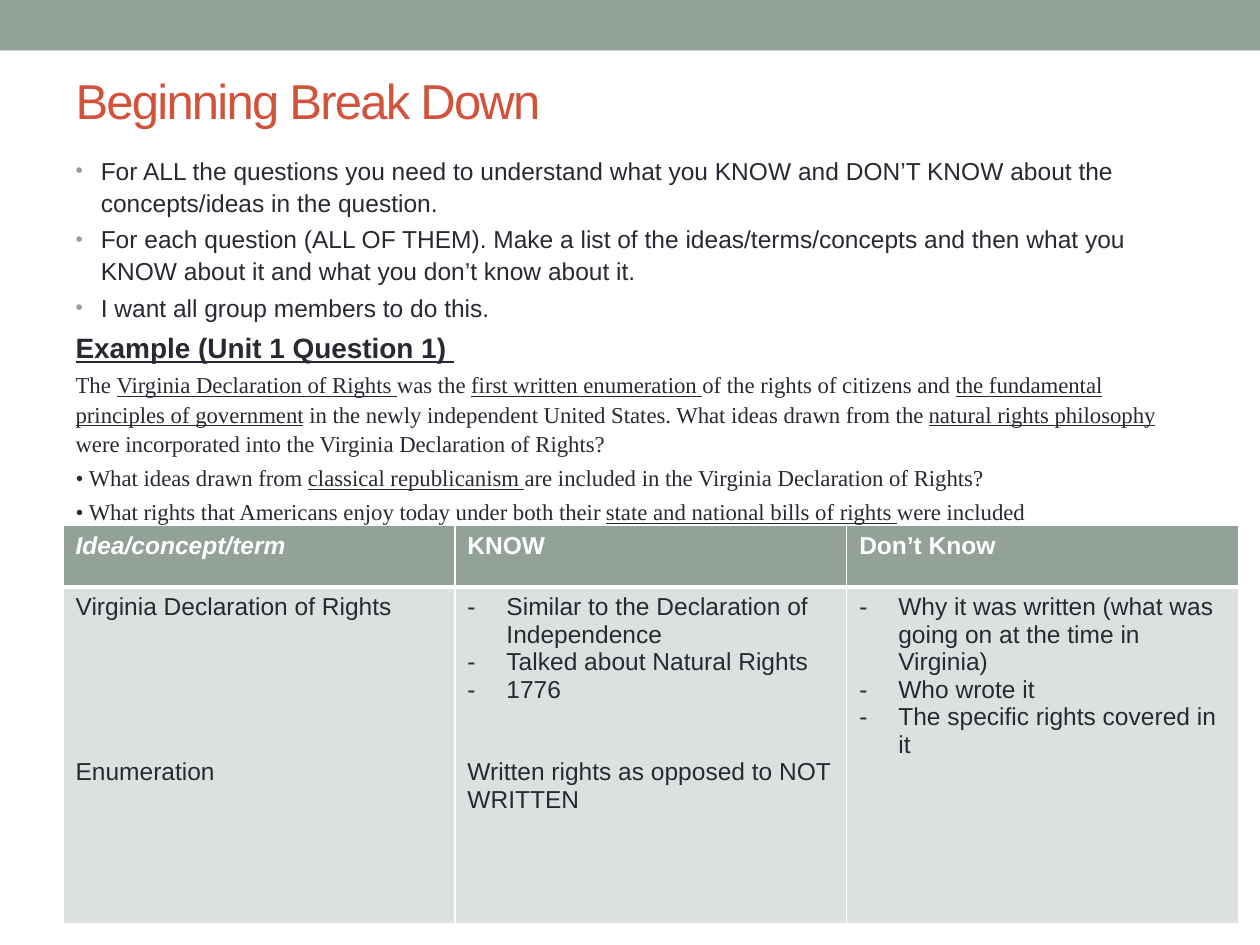
from dataclasses import dataclass
from typing import Optional

import lxml.etree
import pptx
import pptx.dml.color
import pptx.enum.shapes
import pptx.enum.text
import pptx.oxml.ns
import pptx.util

Inches = pptx.util.Inches
Pt = pptx.util.Pt
qn = pptx.oxml.ns.qn

COLORS = {"sage": "93A299", "title": "D2533C", "text": "292934",
          "white": "FFFFFF", "cell": "DCE0DE"}
SANS, SERIF = "Arial", "Times New Roman"


@dataclass
class Line:
    """One paragraph; in its text, underlined parts stand between | marks."""
    text: str
    size: float = 14
    font: str = SANS
    color: str = "text"
    bold: bool = False
    italic: bool = False
    bullet: Optional[str] = None
    indent: float = 0
    before: float = 0
    spacing: Optional[float] = None


def rgb(name: str) -> pptx.dml.color.RGBColor:
    return pptx.dml.color.RGBColor.from_string(COLORS[name])


def add_child(parent, tag: str, **attributes: str):
    return lxml.etree.SubElement(parent, qn(tag), **attributes)


def set_bullet(paragraph, line: Line) -> None:
    properties = paragraph._p.get_or_add_pPr()
    properties.set("marL", str(Inches(line.indent)))
    properties.set("indent", str(-Inches(line.indent)))
    if line.bullet is None:
        add_child(properties, "a:buNone")
        return
    if line.bullet == "•":
        add_child(add_child(properties, "a:buClr"), "a:srgbClr", val=COLORS["sage"])
        add_child(properties, "a:buSzPct", val="85000")
    add_child(properties, "a:buFont", typeface=SANS)
    add_child(properties, "a:buChar", char=line.bullet)


def write_lines(text_frame, lines: list[Line]) -> None:
    for index, line in enumerate(lines):
        paragraph = text_frame.add_paragraph() if index else text_frame.paragraphs[0]
        set_bullet(paragraph, line)
        paragraph.alignment = pptx.enum.text.PP_ALIGN.LEFT
        paragraph.space_before = Pt(line.before)
        if line.spacing:
            paragraph.line_spacing = line.spacing
        for position, part in enumerate(line.text.split("|")):
            if not part:
                continue
            run = paragraph.add_run()
            run.text = part
            run.font.name = line.font
            run.font.size = Pt(line.size)
            run.font.bold = line.bold
            run.font.italic = line.italic
            run.font.underline = position % 2 == 1
            run.font.color.rgb = rgb(line.color)


def place(shape, left: float, top: float, width: float, height: float) -> None:
    shape.left, shape.top = Inches(left), Inches(top)
    shape.width, shape.height = Inches(width), Inches(height)


def fill_cell(cell, lines: list[Line], fill: str, bottom_width: float) -> None:
    write_lines(cell.text_frame, lines)
    properties = cell._tc.get_or_add_tcPr()
    for side in "LRTB":
        width = bottom_width if side == "B" else 1
        border = add_child(properties, f"a:ln{side}", w=str(Pt(width)))
        add_child(add_child(border, "a:solidFill"), "a:srgbClr", val=COLORS["white"])
    cell.fill.solid()
    cell.fill.fore_color.rgb = rgb(fill)


def body_line(text: str, size: float = 14, **options) -> Line:
    return Line(text, size, before=0.2 * size, spacing=1.08, **options)


def bullet_line(text: str) -> Line:
    return body_line(text, bullet="•", indent=0.2)


def question_line(text: str) -> Line:
    return body_line(text, 13, font=SERIF)


def dash_line(text: str) -> Line:
    return Line(text, bullet="-", indent=0.31)


def header_line(text: str, italic: bool = False) -> Line:
    return Line(text, color="white", bold=True, italic=italic)


BODY = [
    bullet_line("For ALL the questions you need to understand what you KNOW and "
                "DON’T KNOW about the concepts/ideas in the question."),
    bullet_line("For each question (ALL OF THEM). Make a list of the ideas/terms/concepts "
                "and then what you KNOW about it and what you don’t know about it."),
    bullet_line("I want all group members to do this."),
    body_line("|Example (Unit 1 Question 1) |", 16, bold=True),
    question_line("The |Virginia Declaration of Rights |was the |first written enumeration |"
                  "of the rights of citizens and |the fundamental principles of government|"
                  " in the newly independent United States. What ideas drawn from the "
                  "|natural rights philosophy |were incorporated into the Virginia "
                  "Declaration of Rights?"),
    question_line("• What ideas drawn from |classical republicanism |are included in the "
                  "Virginia Declaration of Rights?"),
    question_line("• What rights that Americans enjoy today under both their "
                  "|state and national bills of rights |were included"),
]
HEADER = [[header_line("Idea/concept/term", italic=True)],
          [header_line("KNOW")], [header_line("Don’t Know")]]
DETAILS = [
    [Line("Virginia Declaration of Rights"), Line("Enumeration", before=78.6)],
    [dash_line("Similar to the Declaration of Independence"),
     dash_line("Talked about Natural Rights"), dash_line("1776"),
     Line("Written rights as opposed to NOT WRITTEN", before=31.4)],
    [dash_line("Why it was written (what was going on at the time in Virginia)"),
     dash_line("Who wrote it"), dash_line("The specific rights covered in it")],
]


def add_knowledge_table(slide) -> None:
    table = slide.shapes.add_table(2, 3, Inches(0.5), Inches(4.17),
                                   Inches(9.33), Inches(3.16)).table
    for column in table.columns:
        column.width = Inches(3.11)
    for row, height in zip(table.rows, (0.49, 2.67)):
        row.height = Inches(height)
    for column, (heading, details) in enumerate(zip(HEADER, DETAILS)):
        fill_cell(table.cell(0, column), heading, "sage", 3)
        fill_cell(table.cell(1, column), details, "cell", 1)


def main() -> None:
    presentation = pptx.Presentation()
    presentation.slide_width, presentation.slide_height = Inches(10), Inches(7.5)
    slide = presentation.slides.add_slide(presentation.slide_layouts[1])

    band = slide.shapes.add_shape(pptx.enum.shapes.MSO_SHAPE.RECTANGLE,
                                  0, 0, Inches(10), Inches(0.4))
    band.shadow.inherit = False
    band.fill.solid()
    band.fill.fore_color.rgb = rgb("sage")
    band.line.fill.background()

    title, body = slide.shapes.title, slide.placeholders[1]
    place(title, 0.5, 0.58, 9, 0.42)
    title.text_frame.vertical_anchor = pptx.enum.text.MSO_ANCHOR.MIDDLE
    write_lines(title.text_frame, [Line("Beginning Break Down", 28, color="title")])
    title.text_frame.paragraphs[0].runs[0].font._element.set("spc", "-100")

    place(body, 0.5, 1.17, 9, 5.92)
    for text_frame in (title.text_frame, body.text_frame):
        text_frame.auto_size = pptx.enum.text.MSO_AUTO_SIZE.NONE
    write_lines(body.text_frame, BODY)

    add_knowledge_table(slide)
    presentation.save("out.pptx")


if __name__ == "__main__":
    main()
